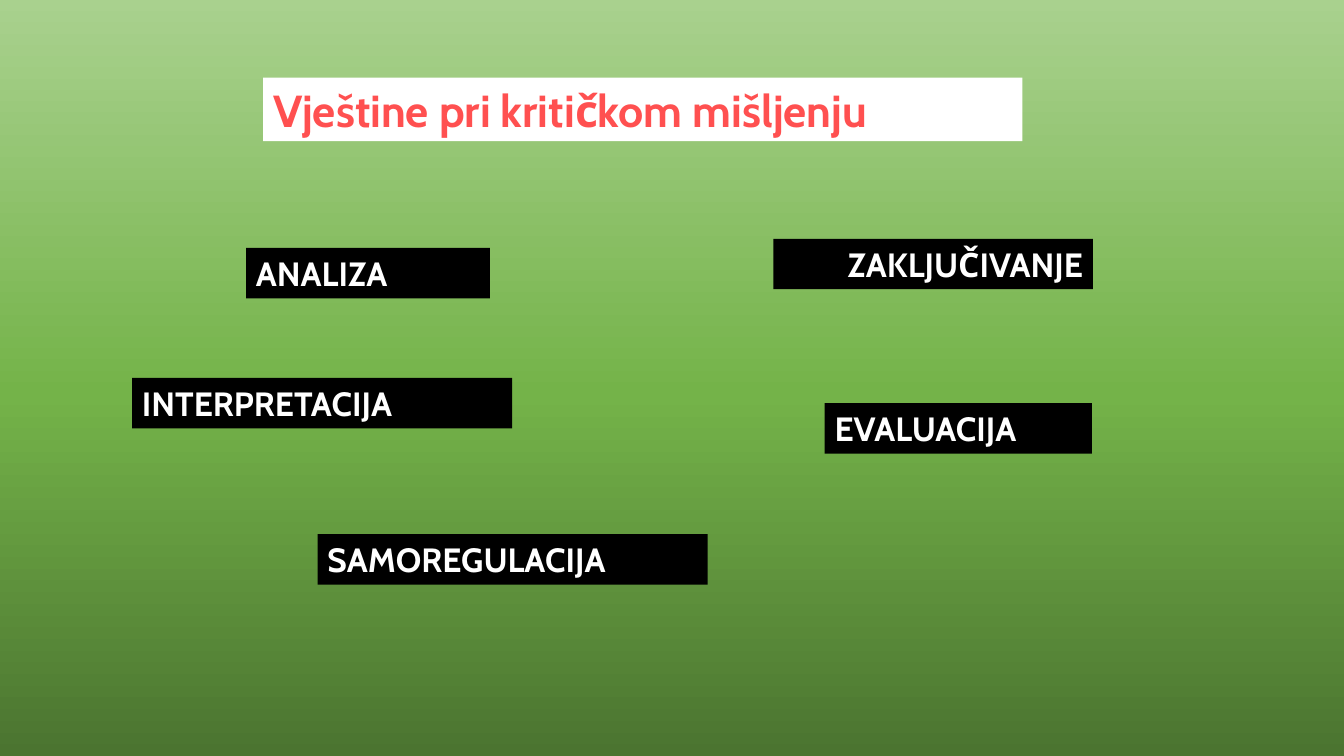
from copy import deepcopy
from dataclasses import dataclass

from pptx import Presentation
from pptx.dml.color import RGBColor
from pptx.enum.text import MSO_AUTO_SIZE, PP_ALIGN
from pptx.slide import Slide
from pptx.util import Inches, Pt

COLORS = {
    "title_fill": "FFFFFF",
    "title_text": "FF5050",
    "skill_fill": "000000",
    "skill_text": "FFFFFF",
}
BACKGROUND_STOPS = [(0, "4B7430"), (0.48, "74B349"), (1, "A9D18E")]


@dataclass
class Label:
    text: str
    left: float
    top: float
    width: float
    height: float = 0.5
    size: int = 24
    role: str = "skill"
    align: PP_ALIGN = PP_ALIGN.LEFT


LABELS = [
    Label("Vještine pri kritičkom mišljenju", 2.61, 0.77, 7.53, 0.63, 32, "title"),
    Label("INTERPRETACIJA", 1.31, 3.75, 3.77),
    Label("ANALIZA", 2.44, 2.46, 2.42),
    Label("EVALUACIJA", 8.18, 4, 2.65),
    Label("ZAKLJUČIVANJE", 7.67, 2.37, 3.17, align=PP_ALIGN.RIGHT),
    Label("SAMOREGULACIJA", 3.15, 5.3, 3.87),
]


def paint_background(page: Slide) -> None:
    """Fill the page with a gradient that runs from bottom to top."""
    fill = page.background.fill
    fill.gradient()
    fill.gradient_angle = 90
    first_stop = page.element.xpath(".//p:bgPr//a:gs")[0]
    first_stop.addnext(deepcopy(first_stop))
    for stop, (position, color) in zip(fill.gradient_stops, BACKGROUND_STOPS):
        stop.position = position
        stop.color.rgb = RGBColor.from_string(color)


def add_label(page: Slide, label: Label) -> None:
    lengths = (label.left, label.top, label.width, label.height)
    box = page.shapes.add_textbox(*map(Inches, lengths))
    box.fill.solid()
    box.fill.fore_color.rgb = RGBColor.from_string(COLORS[f"{label.role}_fill"])
    box.text_frame.word_wrap = True
    box.text_frame.auto_size = MSO_AUTO_SIZE.SHAPE_TO_FIT_TEXT

    para = box.text_frame.paragraphs[0]
    para.alignment = label.align
    span = para.add_run()
    span.text = label.text
    text_format = {"name": "Cabin", "size": Pt(label.size), "bold": True}
    for name, value in text_format.items():
        setattr(span.font, name, value)
    span.font.color.rgb = RGBColor.from_string(COLORS[f"{label.role}_text"])


def main() -> None:
    deck = Presentation()
    deck.slide_width, deck.slide_height = Inches(13.33), Inches(7.5)
    page = deck.slides.add_slide(deck.slide_layouts[6])
    paint_background(page)
    for label in LABELS:
        add_label(page, label)
    deck.save("out.pptx")


if __name__ == "__main__":
    main()
